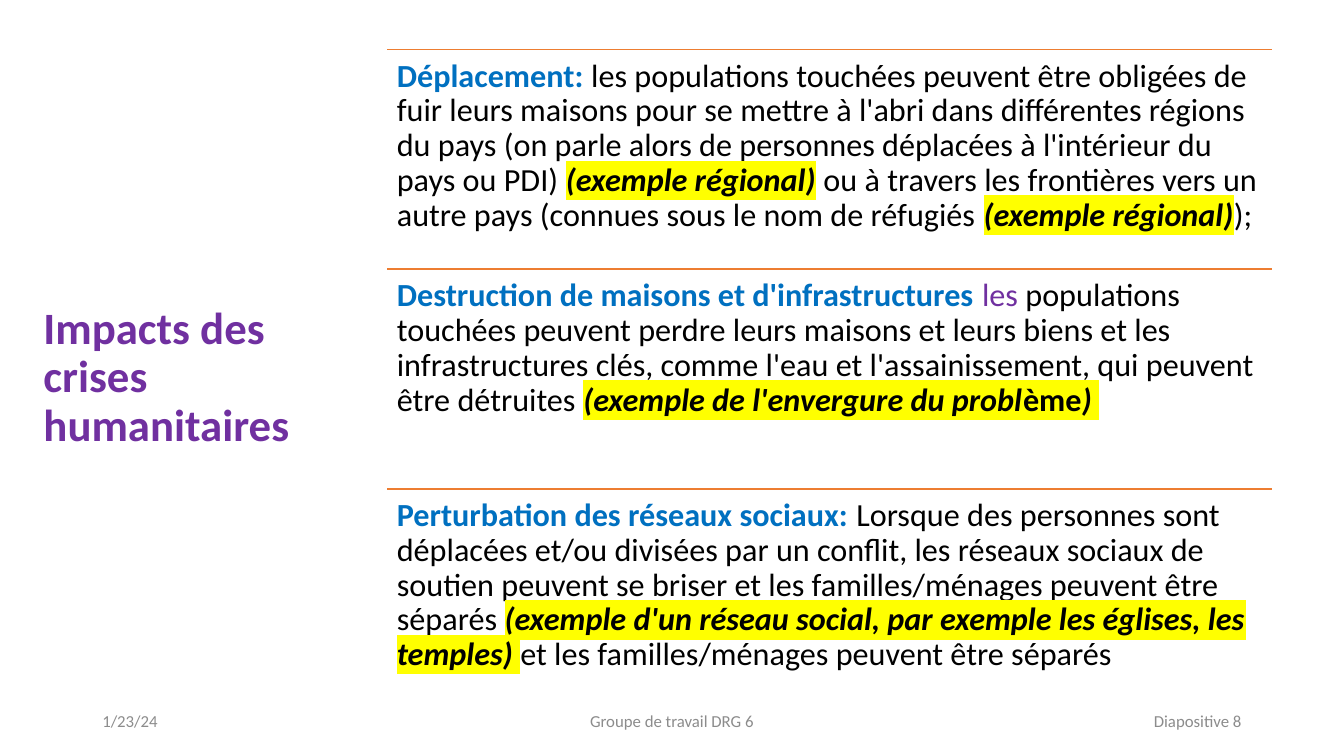
from lxml.etree import SubElement
from pptx import Presentation
from pptx.dml.color import RGBColor
from pptx.enum.shapes import MSO_CONNECTOR
from pptx.enum.text import MSO_ANCHOR, PP_ALIGN
from pptx.oxml import parse_xml
from pptx.oxml.ns import qn
from pptx.util import Pt

COLORS = {
    "title": "7030A0",
    "heading": "0070C0",
    "body": "000000",
    "rule": "ED7D31",
    "footer": "8C8C8C",
    "highlight": "FFFF00",
}
NAMESPACE = "http://schemas.openxmlformats.org/drawingml/2006/main"

presentation = Presentation()
presentation.slide_width = Pt(960)
presentation.slide_height = Pt(540)
slide = presentation.slides.add_slide(presentation.slide_layouts[6])


def add_run(paragraph, text, size=23, color="body", bold=False, italic=False, highlight=False):
    run = paragraph.add_run()
    run.text = text
    run.font.name = "Calibri"
    run.font.size = Pt(size)
    run.font.bold = bold
    run.font.italic = italic
    run.font.color.rgb = RGBColor.from_string(COLORS[color])
    if highlight:
        fill = run.font._element.find(qn("a:solidFill"))
        fill.addnext(parse_xml(
            f'<a:highlight xmlns:a="{NAMESPACE}">'
            f'<a:srgbClr val="{COLORS["highlight"]}"/></a:highlight>'
        ))


def add_text_frame(left, top, width, height, anchor=MSO_ANCHOR.TOP):
    box = slide.shapes.add_textbox(Pt(left), Pt(top), Pt(width), Pt(height))
    box.text_frame.word_wrap = True
    box.text_frame.vertical_anchor = anchor
    return box.text_frame


title = add_text_frame(24, 172, 204.5, 153.5, MSO_ANCHOR.BOTTOM).paragraphs[0]
title.line_spacing = 0.9
add_run(title, "Impacts des crises humanitaires", size=32, color="title", bold=True)

heading = {"color": "heading", "bold": True}
example = {"bold": True, "italic": True, "highlight": True}
impacts = [
    [
        ("Déplacement: ", heading),
        ("les populations touchées peuvent être obligées de fuir leurs maisons pour se mettre "
         "à l'abri dans différentes régions du pays (on parle alors de personnes déplacées à "
         "l'intérieur du pays ou PDI) ", {}),
        ("(exemple régional)", example),
        (" ou à travers les frontières vers un autre pays (connues sous le nom de réfugiés ", {}),
        ("(exemple régional)", example),
        ("); ", {}),
    ],
    [
        ("Destruction de maisons et d'infrastructures", heading),
        (" les ", {"color": "title"}),
        ("populations touchées peuvent perdre leurs maisons et leurs biens et les "
         "infrastructures clés, comme l'eau et l'assainissement, qui peuvent être détruites ", {}),
        ("(exemple de l'envergure du probl", example),
        ("ème", {"bold": True, "highlight": True}),
        (") ", example),
    ],
    [
        ("Perturbation des réseaux sociaux: ", heading),
        ("Lorsque des personnes sont déplacées et/ou divisées par un conflit, les réseaux "
         "sociaux de soutien peuvent se briser et les familles/ménages peuvent être séparés ", {}),
        ("(exemple d'un réseau social, par exemple les églises, les temples) ", example),
        ("et les familles/ménages peuvent être séparés ", {}),
    ],
]

impact_left, impact_top, impact_width, impact_height = 276.5, 35.3, 632, 157
for index, runs in enumerate(impacts):
    top = impact_top + index * impact_height
    rule = slide.shapes.add_connector(
        MSO_CONNECTOR.STRAIGHT, Pt(impact_left), Pt(top), Pt(impact_left + impact_width), Pt(top)
    )
    rule.line.color.rgb = RGBColor.from_string(COLORS["rule"])
    rule.line.width = Pt(1)
    SubElement(rule._element.spPr, qn("a:effectLst"))

    frame = add_text_frame(impact_left, top, impact_width, impact_height)
    frame.margin_left = frame.margin_right = frame.margin_top = frame.margin_bottom = Pt(7)
    paragraph = frame.paragraphs[0]
    paragraph.line_spacing = 0.9
    for text, style in runs:
        add_run(paragraph, text, **style)

footers = [
    ("1/23/24", 66, 216, PP_ALIGN.LEFT),
    ("Groupe de travail DRG 6", 318, 324, PP_ALIGN.CENTER),
    ("Diapositive 8", 678, 216, PP_ALIGN.RIGHT),
]
for text, left, width, alignment in footers:
    paragraph = add_text_frame(left, 500.5, width, 28.75, MSO_ANCHOR.MIDDLE).paragraphs[0]
    paragraph.alignment = alignment
    add_run(paragraph, text, size=12, color="footer")

presentation.save("out.pptx")
